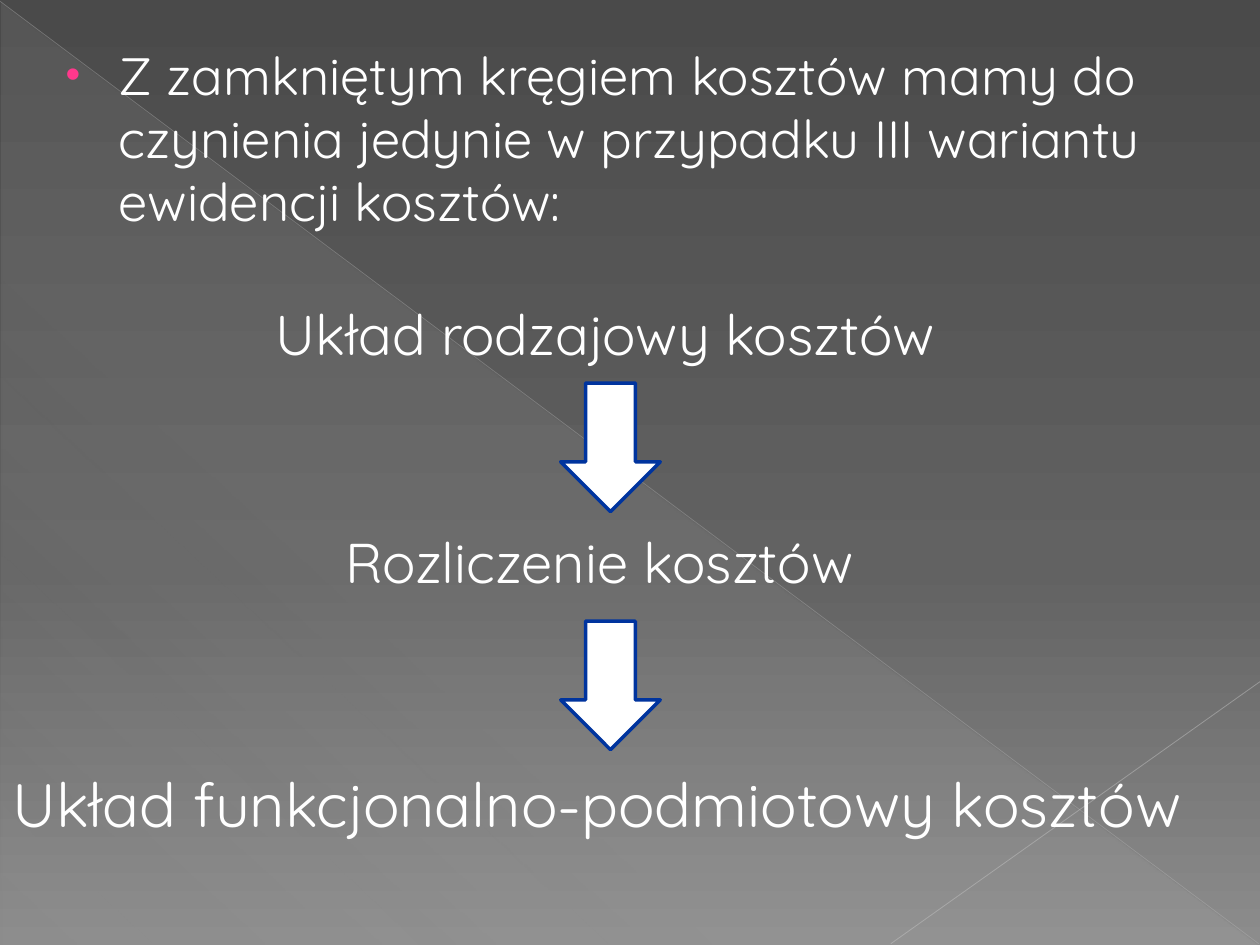
"""Build a slide on the closed cycle of costs, with a three-step downward flow."""
from lxml import etree
from pptx import Presentation
from pptx.dml.color import RGBColor
from pptx.enum.shapes import MSO_CONNECTOR, MSO_SHAPE
from pptx.enum.text import MSO_ANCHOR, MSO_AUTO_SIZE
from pptx.oxml.ns import qn
from pptx.util import Inches, Pt

STRAIGHT = MSO_CONNECTOR.STRAIGHT
TRIANGLE, DOWN_ARROW = MSO_SHAPE.RIGHT_TRIANGLE, MSO_SHAPE.DOWN_ARROW
TOP, NO_FIT, GROW = MSO_ANCHOR.TOP, MSO_AUTO_SIZE.NONE, MSO_AUTO_SIZE.SHAPE_TO_FIT_TEXT

FONT = "Quicksand"
COLORS = {
    "text": "FFFFFF", "bullet": "FF388C", "arrow": "FFFFFF", "arrow_line": "00349E",
    "bg_top": "4A4A4A", "bg_mid": "626262", "bg_bottom": "8C8C8C",
    "triangle": "D2D2D2", "long_line": "BFBFBF", "short_line": "C6C6C6",
}
INTRO = ("Z zamkniętym kręgiem kosztów mamy do czynienia jedynie w przypadku "
         "III wariantu ewidencji kosztów:")
STEPS = [
    ("Układ rodzajowy kosztów", (2.09, 2.33, 5.66, 0.64), 32),
    ("Rozliczenie kosztów", (2.64, 4.14, 4.4, 0.64), 32),
    ("Układ funkcjonalno-podmiotowy kosztów", (0, 6.03, 10.3, 0.71), 35),
]
BACKGROUND = [(0, "bg_top", 100), (60, "bg_mid", 100), (100, "bg_bottom", 100)]
TRIANGLE_FILL = [(0, "triangle", 10), (70, "triangle", 8), (100, "triangle", 1)]
DECOR_LINES = [
    ((0, 0.01, 9.99, 7.49), "long_line", 0.39, 35),
    ((10, 5.41, 7.07, 7.49), "short_line", 0.47, 45),
]
ARROW_LEFT, ARROW_TOP, ARROW_STEP = 4.45, 3.04, 1.89
ARROW_SIZE = (0.79, 1.02)


def rgb(name):
    return RGBColor.from_string(COLORS[name])


def box(values):
    return [Inches(v) for v in values]


def child(parent, tag, **attrs):
    return etree.SubElement(parent, qn(tag), {k: str(v) for k, v in attrs.items()})


def set_gradient(fill, parent, stops, angle):
    fill.solid()
    fill.fore_color.rgb = rgb(stops[0][1])
    grad = etree.Element(qn("a:gradFill"), rotWithShape="1")
    gs_list = child(grad, "a:gsLst")
    for pos, color, alpha in stops:
        gs = child(gs_list, "a:gs", pos=pos * 1000)
        clr = child(gs, "a:srgbClr", val=COLORS[color])
        if alpha < 100:
            child(clr, "a:alpha", val=alpha * 1000)
    child(grad, "a:lin", ang=angle * 60000, scaled=0)
    parent.replace(parent.find(qn("a:solidFill")), grad)


def style(p, size):
    p.font.name = FONT
    p.font.size = Pt(size)
    p.font.color.rgb = rgb("text")


def add_decor(s):
    set_gradient(s.background.fill, s.element.find(".//" + qn("p:bgPr")), BACKGROUND, 90)
    sp = s.shapes.add_shape(TRIANGLE, *box((0.01, 0.02, 9.98, 7.48)))
    sp.shadow.inherit = False
    sp.line.fill.background()
    set_gradient(sp.fill, sp.element.spPr, TRIANGLE_FILL, 133)
    for ends, color, width, alpha in DECOR_LINES:
        line = s.shapes.add_connector(STRAIGHT, *box(ends))
        line.line.color.rgb = rgb(color)
        line.line.width = Pt(width)
        spPr = line.element.spPr
        child(spPr.find(".//" + qn("a:srgbClr")), "a:alpha", val=alpha * 1000)
        child(spPr, "a:effectLst")


def add_intro(s, body):
    body.left, body.top, body.width, body.height = box((0.35, 0.29, 8.98, 1.81))
    s.shapes._spTree.append(body.element)
    tf = body.text_frame
    tf.text = INTRO
    tf.auto_size = NO_FIT
    tf.vertical_anchor = TOP
    p = tf.paragraphs[0]
    p.space_before = Pt(6)
    style(p, 30)
    pPr = p._p.get_or_add_pPr()
    pPr.set("marL", str(Inches(0.49)))
    pPr.set("indent", str(Inches(-0.42)))
    bullet = [
        etree.Element(qn("a:buClr")),
        etree.Element(qn("a:buSzPct"), val="80000"),
        etree.Element(qn("a:buFont"), typeface="Arial"),
        etree.Element(qn("a:buChar"), char="•"),
    ]
    child(bullet[0], "a:srgbClr", val=COLORS["bullet"])
    for el in bullet:
        pPr.find(qn("a:defRPr")).addprevious(el)


def add_step(s, text, place, size):
    tf = s.shapes.add_textbox(*box(place)).text_frame
    tf.text = text
    tf.word_wrap = False
    tf.auto_size = GROW
    style(tf.paragraphs[0], size)


def add_arrow(s, top):
    sp = s.shapes.add_shape(DOWN_ARROW, *box((ARROW_LEFT, top, *ARROW_SIZE)))
    sp.shadow.inherit = False
    sp.fill.solid()
    sp.fill.fore_color.rgb = rgb("arrow")
    sp.line.color.rgb = rgb("arrow_line")
    sp.line.width = Pt(2)


def main():
    prs = Presentation()
    prs.slide_width, prs.slide_height = Inches(10), Inches(7.5)
    s = prs.slides.add_slide(prs.slide_layouts[1])
    title = s.shapes.title.element
    title.getparent().remove(title)
    add_decor(s)
    add_intro(s, s.placeholders[1])
    for i, step in enumerate(STEPS):
        add_step(s, *step)
        if i < len(STEPS) - 1:
            add_arrow(s, ARROW_TOP + i * ARROW_STEP)
    prs.save("out.pptx")


if __name__ == "__main__":
    main()
